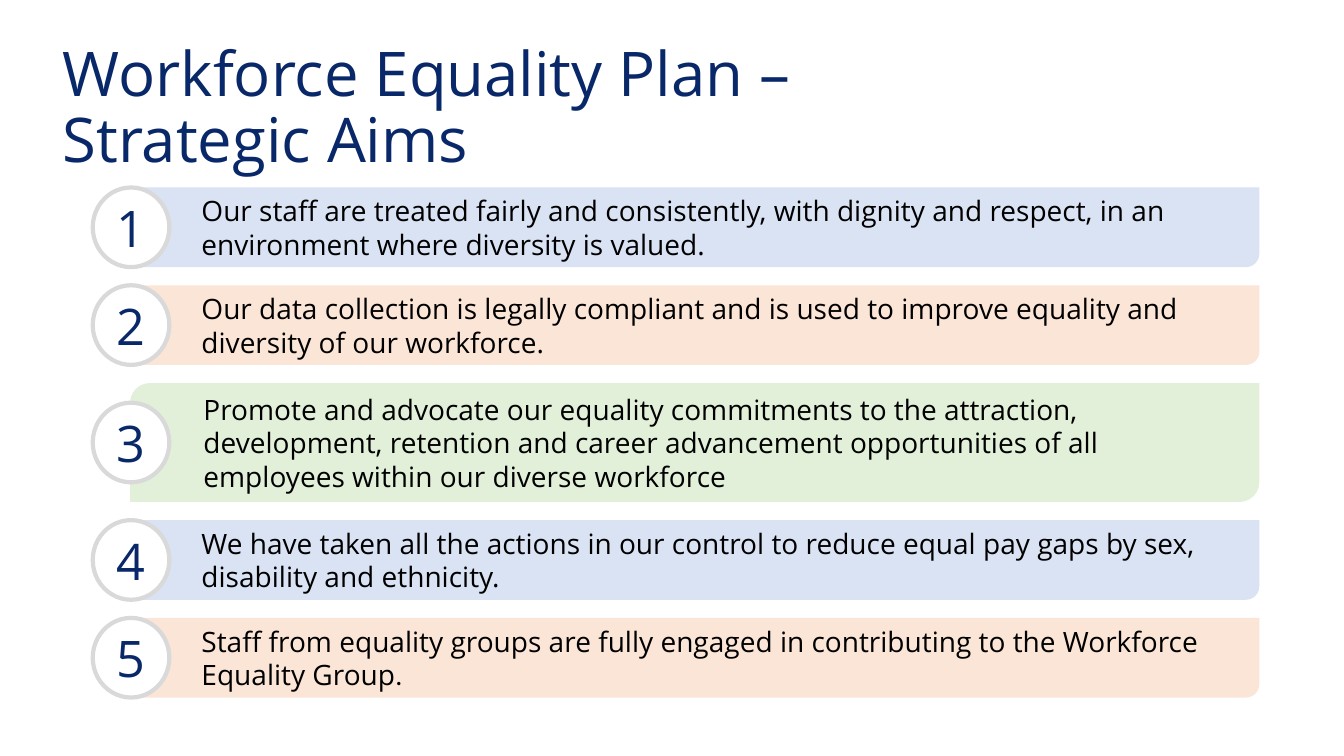
from dataclasses import dataclass

from pptx import Presentation
from pptx import util as u
from pptx.dml.color import RGBColor
from pptx.enum import shapes, text


@dataclass(frozen=True)
class Theme:
    font: str = "Open Sans"
    alt: str = "Calibri"
    navy: str = "092869"
    black: str = "000000"
    white: str = "FFFFFF"
    ring: str = "D9D9D9"
    blue: str = "DAE3F3"
    peach: str = "FBE5D6"
    green: str = "E2F0D9"
    title: int = 44
    digit: int = 36
    body: int = 20


class Deck:
    def __init__(self, theme, slide):
        self.theme = theme
        self.slide = slide

    def style(self, para, size, color):
        para.font.name = self.theme.font
        para.font.size = u.Pt(size)
        para.font.color.rgb = RGBColor.from_string(color)

    def title(self, words, x, y, w, h):
        box = self.slide.shapes.add_textbox(*map(u.Inches, (x, y, w, h)))
        frame = box.text_frame
        frame.word_wrap = True
        frame.margin_left = 0
        frame.vertical_anchor = text.MSO_ANCHOR.MIDDLE
        para = frame.paragraphs[0]
        para.text = words
        para.line_spacing = 0.9
        self.style(para, self.theme.title, self.theme.navy)

    def shape(self, group, kind, fill, x, y, w, h):
        item = group.shapes.add_shape(kind, *map(u.Inches, (x, y, w, h)))
        item.shadow.inherit = False
        item.fill.solid()
        item.fill.fore_color.rgb = RGBColor.from_string(fill)
        item.line.fill.background()
        item.text_frame.word_wrap = True
        item.text_frame.vertical_anchor = text.MSO_ANCHOR.MIDDLE
        return item

    def bar(self, group, words, stop, fill, x, y, w, h):
        kind = shapes.MSO_SHAPE.ROUND_2_DIAG_RECTANGLE
        item = self.shape(group, kind, fill, x, y, w, h)
        item.text_frame.margin_left = u.Inches(0.67)
        para = item.text_frame.paragraphs[0]
        para.alignment = text.PP_ALIGN.LEFT
        para.add_run().text = words
        self.style(para, self.theme.body, self.theme.black)
        if stop:
            run = para.add_run()
            run.text = stop
            run.font.name = self.theme.alt

    def badge(self, group, num, x, y, w, h):
        kind = shapes.MSO_SHAPE.OVAL
        item = self.shape(group, kind, self.theme.white, x, y, w, h)
        item.line.color.rgb = RGBColor.from_string(self.theme.ring)
        item.line.width = u.Pt(3)
        para = item.text_frame.paragraphs[0]
        para.text = str(num)
        para.alignment = text.PP_ALIGN.CENTER
        self.style(para, self.theme.digit, self.theme.navy)

    def aim(self, num, words, stop, fill, top, high):
        group = self.slide.shapes.add_group_shape()
        self.bar(group, words, stop, fill, 1.29, top, 11.2, high)
        self.badge(group, num, 0.92, top + (high - ROW) / 2, 0.76, ROW)


ROW = 0.79
TALL = 1.18
GAP = 0.18


def main():
    prs = Presentation()
    prs.slide_width = u.Inches(13.33)
    prs.slide_height = u.Inches(7.5)
    theme = Theme()
    deck = Deck(theme, prs.slides.add_slide(prs.slide_layouts[6]))
    deck.title("Workforce Equality Plan –\vStrategic Aims", 0.62, 0.36, 10.98, 1.45)
    aims = [
        ("Our staff are treated fairly and consistently, with dignity and respect, "
         "in an environment where diversity is valued.", "", theme.blue, ROW),
        ("Our data collection is legally compliant and is used to improve "
         "equality and diversity of our workforce.", "", theme.peach, ROW),
        ("Promote and advocate our equality commitments to the attraction, "
         "development, retention and career advancement opportunities of all "
         "employees within our diverse workforce", "", theme.green, TALL),
        ("We have taken all the actions in our control to reduce equal pay gaps "
         "by sex, disability and ethnicity.", "", theme.blue, ROW),
        ("Staff from equality groups are fully engaged in contributing to the "
         "Workforce Equality Group", ".", theme.peach, ROW),
    ]
    top = 1.86
    for num, (words, stop, fill, high) in enumerate(aims, 1):
        deck.aim(num, words, stop, fill, top, high)
        top += high + GAP
    prs.save("out.pptx")


if __name__ == "__main__":
    main()
